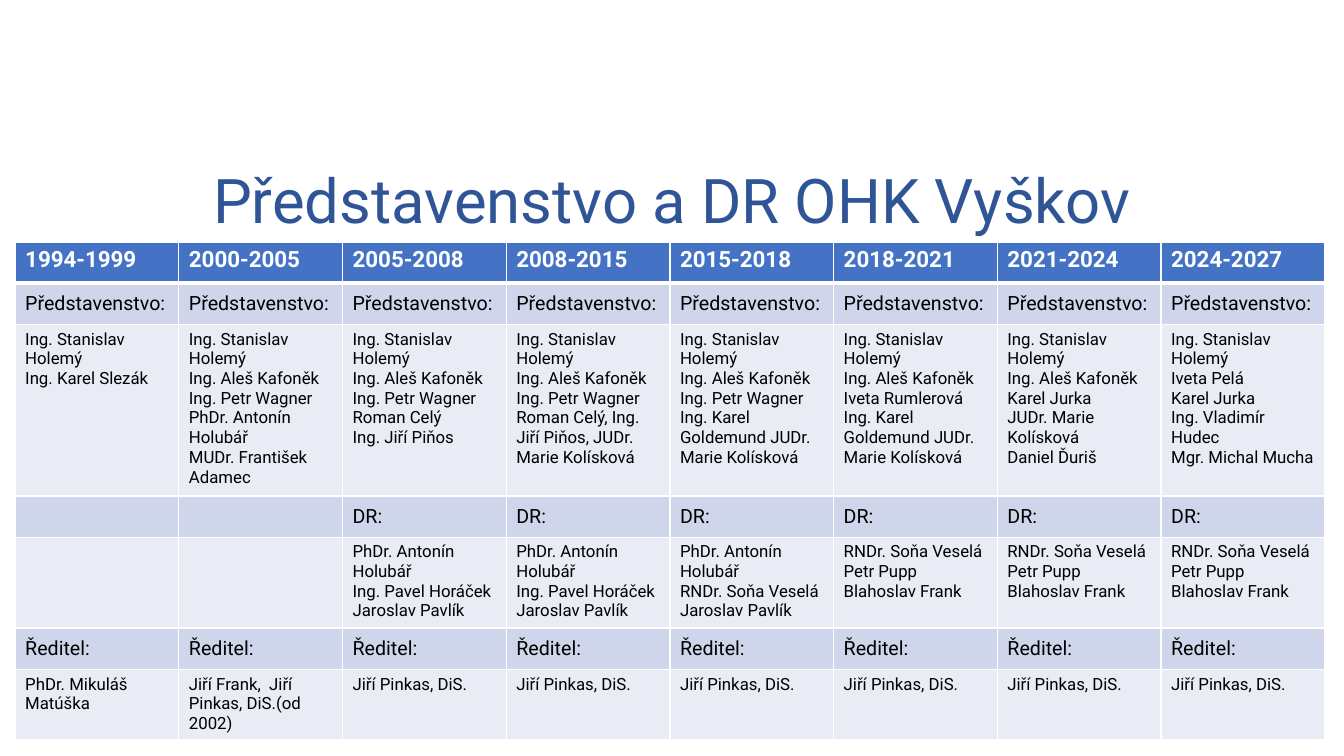
from lxml import etree
from pptx import Presentation
from pptx import util as u
from pptx.dml.color import RGBColor
from pptx.enum import text
from pptx.oxml import ns

COLORS = {
    "title": "2F5597",
    "header": "4472C4",
    "label": "CFD5EA",
    "names": "E9EBF5",
    "white": "FFFFFF",
    "black": "000000",
}

PERIODS = ["1994-1999", "2000-2005", "2005-2008", "2008-2015",
           "2015-2018", "2018-2021", "2021-2024", "2024-2027"]

HOLEMY = "Ing. Stanislav Holemý"
KAFONEK = "Ing. Aleš Kafoněk"
PAIR = HOLEMY + "\n" + KAFONEK
WAGNER = "Ing. Petr Wagner"
GOLDEMUND = "Ing. Karel Goldemund JUDr. Marie Kolísková"
HOLUBAR = "PhDr. Antonín Holubář"
VESELA = "RNDr. Soňa Veselá"
PAVLIK = "Jaroslav Pavlík"

BOARD = [
    [HOLEMY, "Ing. Karel Slezák"],
    [PAIR, WAGNER, HOLUBAR, "MUDr. František Adamec"],
    [PAIR, WAGNER, "Roman Celý", "Ing. Jiří Piňos"],
    [PAIR, WAGNER, "Roman Celý, Ing. Jiří Piňos, JUDr. Marie Kolísková"],
    [PAIR, WAGNER, GOLDEMUND],
    [PAIR, "Iveta Rumlerová", GOLDEMUND],
    [HOLEMY, KAFONEK, "Karel Jurka", "JUDr. Marie Kolísková", "Daniel Ďuriš"],
    [HOLEMY, "Iveta Pelá", "Karel Jurka", "Ing. Vladimír Hudec", "Mgr. Michal Mucha"],
]

SUPERVISORS = (
    [[]] * 2
    + [[HOLUBAR, "Ing. Pavel Horáček", PAVLIK]] * 2
    + [[HOLUBAR, VESELA, PAVLIK]]
    + [[VESELA, "Petr Pupp", "Blahoslav Frank"]] * 3
)

DIRECTORS = (
    [["PhDr. Mikuláš Matúška"], ["Jiří Frank,  Jiří Pinkas, DiS.(od 2002)"]]
    + [["Jiří Pinkas, DiS."]] * 6
)

ROWS = [
    ("header", [[period] for period in PERIODS]),
    ("label", [["Představenstvo:"]] * 8),
    ("names", BOARD),
    ("label", [[]] * 2 + [["DR:"]] * 6),
    ("names", SUPERVISORS),
    ("label", [["Ředitel:"]] * 8),
    ("names", DIRECTORS),
]


class SlideBuilder:
    font = "Roboto"
    row_height = 0.41
    row_styles = {
        "header": (16, "white", True, text.MSO_ANCHOR.TOP),
        "label": (14, "black", False, text.MSO_ANCHOR.MIDDLE),
        "names": (12, "black", False, text.MSO_ANCHOR.TOP),
    }

    def __init__(self, slide):
        self.slide = slide

    def add_lines(self, frame, lines, size, color, bold=False):
        for index, line in enumerate(lines):
            paragraph = frame.paragraphs[0] if index == 0 else frame.add_paragraph()
            for part_index, part in enumerate(line.split("\n")):
                if part_index:
                    paragraph.add_line_break()
                run = paragraph.add_run()
                run.text = part
                run.font.name = self.font
                run.font.size = u.Pt(size)
                run.font.bold = bold
                run.font.color.rgb = RGBColor.from_string(COLORS[color])

    def title(self, wording, left, top, width, height):
        box = self.slide.shapes.add_textbox(
            u.Inches(left), u.Inches(top), u.Inches(width), u.Inches(height))
        frame = box.text_frame
        frame.word_wrap = True
        frame.vertical_anchor = text.MSO_ANCHOR.MIDDLE
        self.add_lines(frame, [wording], 44, "title")
        frame.paragraphs[0].alignment = text.PP_ALIGN.CENTER
        frame.paragraphs[0].line_spacing = 0.9

    def borders(self, cell, widths):
        properties = cell._tc.get_or_add_tcPr()
        for position, (side, width) in enumerate(widths.items()):
            line = etree.Element(ns.qn("a:ln" + side), w=str(u.Pt(width)))
            fill = etree.SubElement(line, ns.qn("a:solidFill"))
            etree.SubElement(fill, ns.qn("a:srgbClr"), val=COLORS["white"])
            properties.insert(position, line)

    def table(self, rows, left, top, width, height):
        holder = self.slide.shapes.add_table(
            len(rows), len(PERIODS),
            u.Inches(left), u.Inches(top), u.Inches(width), u.Inches(height))
        grid = holder.table
        for row_index, (kind, entries) in enumerate(rows):
            grid.rows[row_index].height = u.Inches(self.row_height)
            size, color, bold, anchor = self.row_styles[kind]
            top_width = 3 if row_index == 1 else 1
            bottom_width = 3 if kind == "header" else 1
            for column, lines in enumerate(entries):
                cell = grid.cell(row_index, column)
                cell.fill.solid()
                cell.fill.fore_color.rgb = RGBColor.from_string(COLORS[kind])
                cell.vertical_anchor = anchor
                self.borders(cell, {"L": 1, "R": 1, "T": top_width, "B": bottom_width})
                self.add_lines(cell.text_frame, lines, size, color, bold)
        holder.height = u.Inches(height)


def main():
    deck = Presentation()
    deck.slide_width = u.Inches(13.33)
    deck.slide_height = u.Inches(7.5)
    builder = SlideBuilder(deck.slides.add_slide(deck.slide_layouts[6]))
    builder.title("Představenstvo a DR OHK Vyškov", 0.92, 1.33, 11.5, 1.37)
    builder.table(ROWS, 0.15, 2.4, 12.99, 4.94)
    deck.save("out.pptx")


if __name__ == "__main__":
    main()
